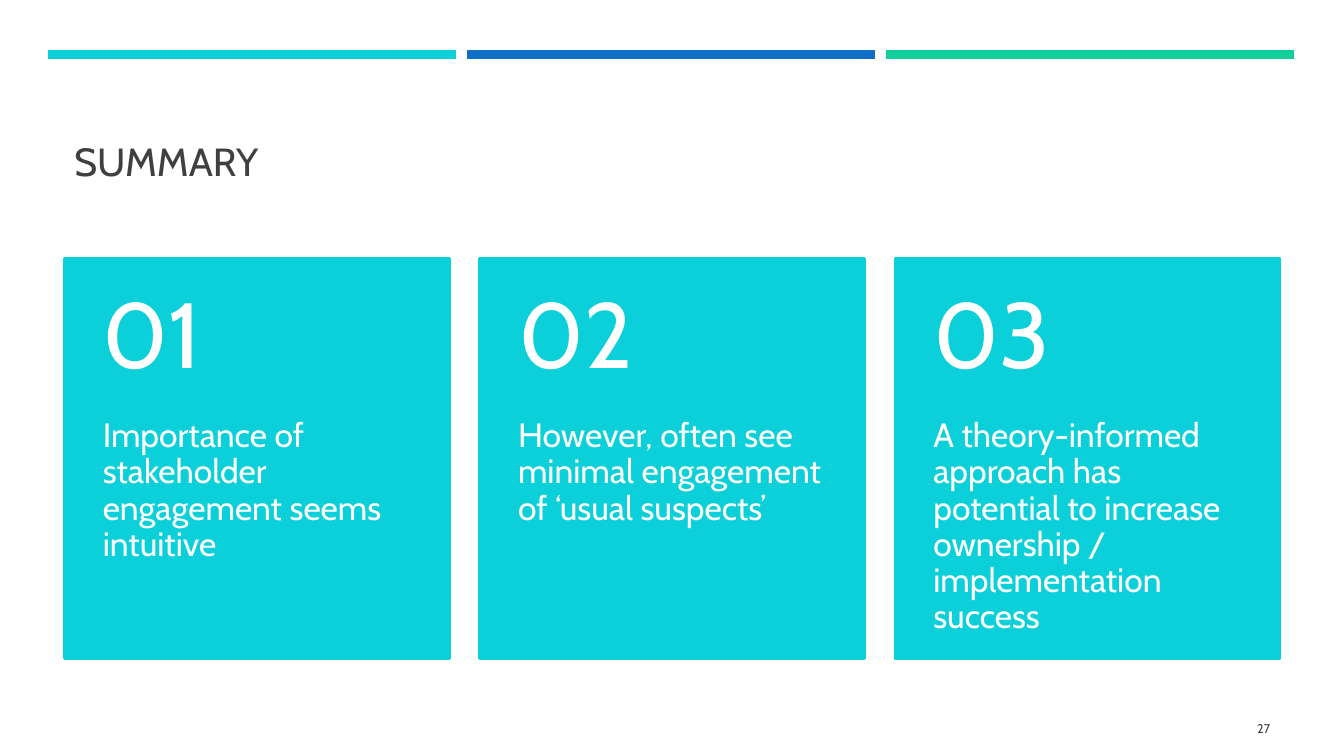
from pptx import Presentation
from pptx.dml.color import RGBColor
from pptx.enum import shapes, text
from pptx.oxml.ns import qn
from pptx.util import Pt
from lxml import etree

AQUA = RGBColor(0x0B, 0xD0, 0xD9)
BLUE = RGBColor(0x0F, 0x6F, 0xC6)
GREEN = RGBColor(0x10, 0xCF, 0x9B)
GREY = RGBColor(0x40, 0x40, 0x40)
WHITE = RGBColor(0xFF, 0xFF, 0xFF)
FONT = "Cabin"
TOP, MID, LOW = text.MSO_ANCHOR.TOP, text.MSO_ANCHOR.MIDDLE, text.MSO_ANCHOR.BOTTOM
LEFT, RIGHT = text.PP_ALIGN.LEFT, text.PP_ALIGN.RIGHT
CARDS = [
    "Importance of stakeholder engagement seems intuitive",
    "However, often see minimal engagement of ‘usual suspects’",
    "A theory-informed approach has potential to increase ownership / implementation success",
]


def label(slide, box, words, size, color, anchor,
          inset=(7.2, 3.6, 7.2, 3.6), align=LEFT, lead=1.0):
    """Place one paragraph of text in a box (left, top, width, height)."""
    frame = slide.shapes.add_textbox(*map(Pt, box)).text_frame
    frame.word_wrap = True
    frame.vertical_anchor = anchor
    frame.margin_left, frame.margin_top, frame.margin_right, frame.margin_bottom = map(Pt, inset)
    para = frame.paragraphs[0]
    para.text = words
    para.alignment = align
    para.line_spacing = lead
    para.font.size = Pt(size)
    para.font.name = FONT
    para.font.color.rgb = color


def bars(slide, box):
    """Draw three coloured rules evenly spread across the box."""
    left, top, width, gap = box
    size = (width - 2 * gap) / 3
    for i, color in enumerate((AQUA, BLUE, GREEN)):
        x = left + i * (size + gap)
        bar = slide.shapes.add_connector(
            shapes.MSO_CONNECTOR.STRAIGHT, Pt(x), Pt(top), Pt(x + size), Pt(top))
        bar.line.color.rgb = color
        bar.line.width = Pt(6.5)
        etree.SubElement(bar._element.spPr, qn("a:effectLst"))


def card(slide, box, number, words):
    """Draw a filled card with a large number above its text."""
    left, top, width, height = box
    head = height * 0.4
    panel = slide.shapes.add_shape(shapes.MSO_SHAPE.RECTANGLE, *map(Pt, box))
    panel.shadow.inherit = False
    panel.fill.solid()
    panel.fill.fore_color.rgb = AQUA
    panel.line.color.rgb = AQUA
    panel.line.width = Pt(1.75)
    label(slide, (left, top + head, width, height - head), words, 24, WHITE, TOP,
          (27.4, 0, 27.4, 26), lead=0.9)
    label(slide, (left, top, width, head), f"{number:02}", 66, WHITE, MID,
          (27.4, 13, 27.4, 13), lead=0.9)


def row(slide, box, gap):
    """Spread the cards evenly across the box."""
    left, top, width, height = box
    size = (width - gap * (len(CARDS) - 1)) / len(CARDS)
    for i, words in enumerate(CARDS):
        card(slide, (left + i * (size + gap), top, size, height), i + 1, words)


def main():
    """Build and save the summary slide."""
    deck = Presentation()
    deck.slide_width, deck.slide_height = Pt(960), Pt(540)
    slide = deck.slides.add_slide(deck.slide_layouts[6])
    bars(slide, (34.5, 39, 890, 8))
    label(slide, (46, 57.5, 868.3, 78), "SUMMARY", 28, GREY, LOW)
    row(slide, (46, 184.5, 868.3, 286), 21.6)
    label(slide, (831.6, 506, 82.7, 29), "27", 9, GREY, MID, align=RIGHT)
    deck.save("out.pptx")


if __name__ == "__main__":
    main()
